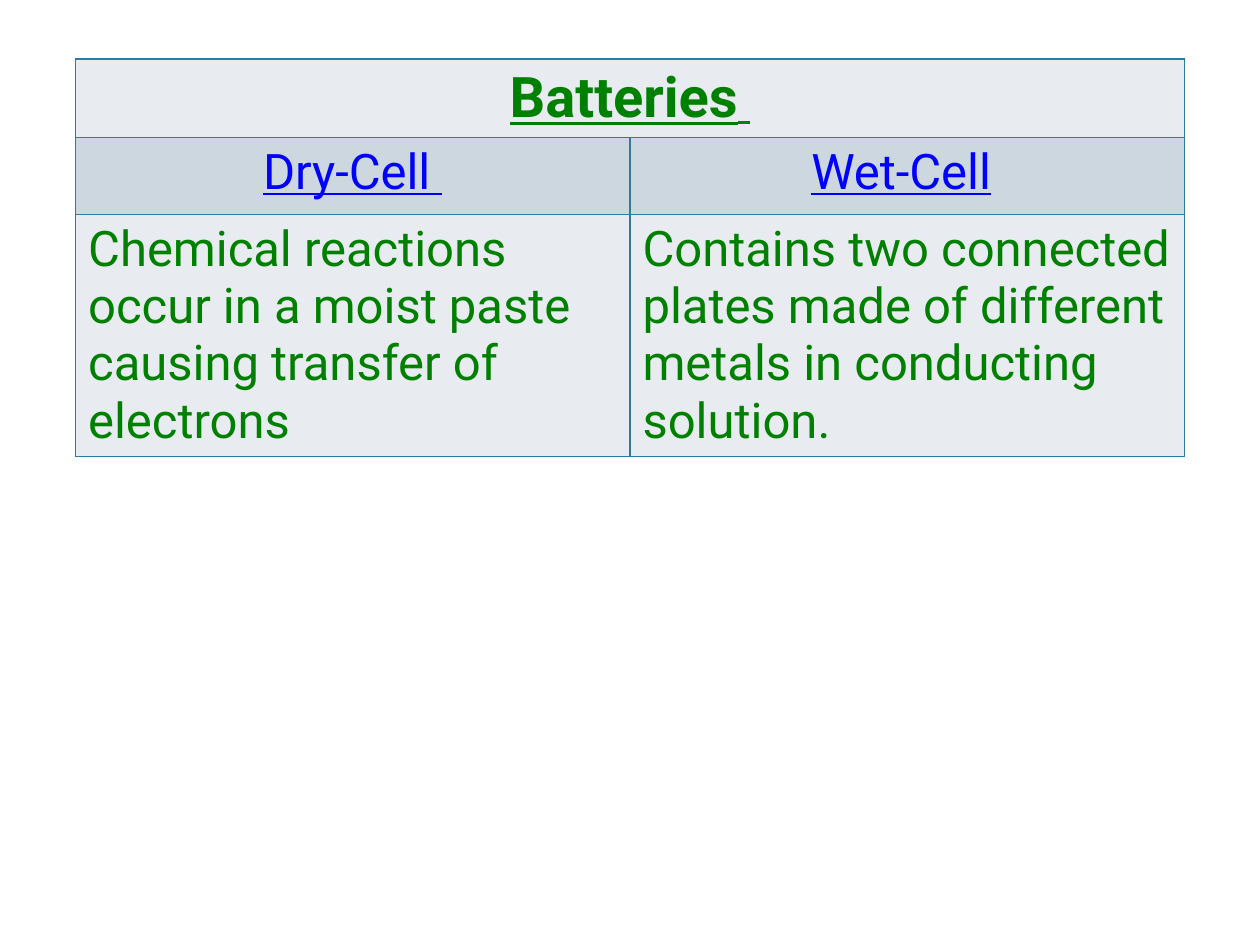
import pptx
import pptx.dml.color
import pptx.enum.text
import pptx.oxml
import pptx.oxml.ns
import pptx.util
from pptx.util import Inches

THEME = {
    "font": "Roboto",
    "title_size": 32,
    "body_size": 28,
    "green": "008000",
    "blue": "0000FF",
    "pale": "E8ECF0",
    "band": "CDD7DF",
    "border": "2C7C9F",
    "border_width": 1,
}
TITLE = "Batteries"
CELL_TYPES = ["Dry-Cell ", "Wet-Cell"]
DESCRIPTIONS = [
    "Chemical reactions occur in a moist paste causing transfer of electrons",
    "Contains two connected plates made of different metals in conducting solution.",
]
LEFT, TOP, WIDTH, HEIGHT = 0.6, 0.47, 8.8, 3.67
MIN_ROW_HEIGHT = 0.61


def rgb(color):
    return pptx.dml.color.RGBColor.from_string(color)


def add_text(cell, text, *, size=THEME["body_size"], color=THEME["green"],
             bold=False, underline=False, centered=False):
    """Append one formatted run to the cell's first paragraph."""
    paragraph = cell.text_frame.paragraphs[0]
    align = pptx.enum.text.PP_ALIGN
    paragraph.alignment = align.CENTER if centered else align.LEFT
    run = paragraph.add_run()
    run.text = text
    run.font.name = THEME["font"]
    run.font.size = pptx.util.Pt(size)
    run.font.color.rgb = rgb(color)
    run.font.bold = bold
    run.font.underline = underline


def style_cell(cell, fill):
    """Draw the four borders, then fill the cell."""
    properties = cell._tc.get_or_add_tcPr()
    width = pptx.util.Pt(THEME["border_width"])
    for side in ("lnL", "lnR", "lnT", "lnB"):
        properties.append(pptx.oxml.parse_xml(
            f'<a:{side} {pptx.oxml.ns.nsdecls("a")} w="{width}"><a:solidFill>'
            f'<a:srgbClr val="{THEME["border"]}"/></a:solidFill></a:{side}>'))
    cell.fill.solid()
    cell.fill.fore_color.rgb = rgb(fill)


def main():
    deck = pptx.Presentation()
    deck.slide_width, deck.slide_height = Inches(10), Inches(7.5)
    slide = deck.slides.add_slide(deck.slide_layouts[6])

    frame = slide.shapes.add_table(
        3, len(CELL_TYPES), Inches(LEFT), Inches(TOP), Inches(WIDTH), Inches(HEIGHT))
    batteries = frame.table
    for row in batteries.rows:
        row.height = Inches(MIN_ROW_HEIGHT)  # rows grow to fit their text
    frame.height = Inches(HEIGHT)

    for row, fill in zip(batteries.rows, ("pale", "band", "pale")):
        for cell in row.cells:
            style_cell(cell, THEME[fill])

    heading = batteries.cell(0, 0)
    heading.merge(batteries.cell(0, len(CELL_TYPES) - 1))
    add_text(heading, TITLE, size=THEME["title_size"], bold=True,
             underline=True, centered=True)
    add_text(heading, " ", bold=True, underline=True, centered=True)

    for column, (cell_type, description) in enumerate(zip(CELL_TYPES, DESCRIPTIONS)):
        add_text(batteries.cell(1, column), cell_type, color=THEME["blue"],
                 underline=True, centered=True)
        add_text(batteries.cell(2, column), description)
    add_text(batteries.cell(1, 1), " ", color=THEME["blue"], centered=True)

    deck.save("out.pptx")


if __name__ == "__main__":
    main()
